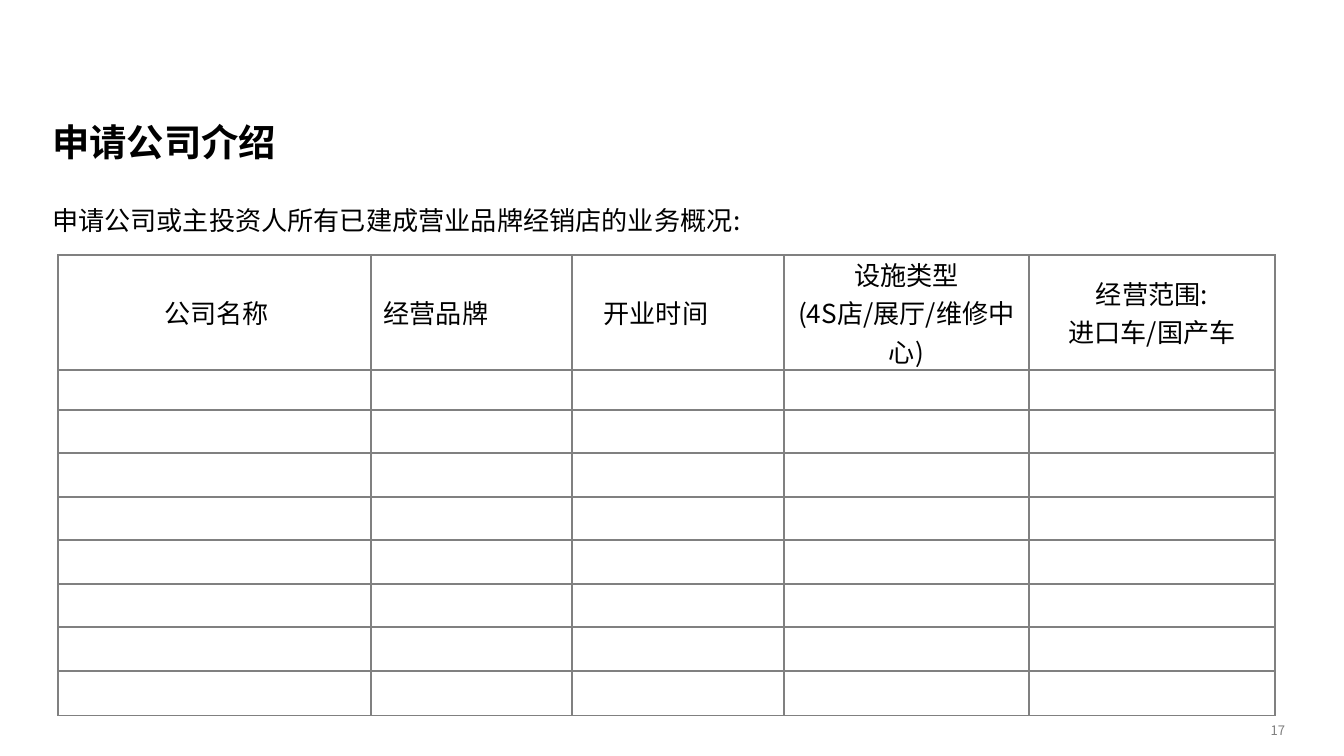
"""Build the applicant company slide with a blank form for dealership details."""
from lxml import etree
from pptx import Presentation
from pptx import util as u
from pptx.dml.color import RGBColor
from pptx.enum import text
from pptx.oxml.ns import qn

PX = 914400 / 134.4
FONT = "Noto Sans CJK SC"
BLACK, GREY = "000000", "808080"
LEFT, CENTER, RIGHT = text.PP_ALIGN.LEFT, text.PP_ALIGN.CENTER, text.PP_ALIGN.RIGHT
TOP, MIDDLE, BOTTOM = text.MSO_ANCHOR.TOP, text.MSO_ANCHOR.MIDDLE, text.MSO_ANCHOR.BOTTOM

# words, box, size, colour, bold, align, anchor, line spacing
TEXTS = [
    ("申请公司或主投资人所有已建成营业品牌经销店的业务概况:",
     (52, 198, 1234, 508), 14, BLACK, False, LEFT, TOP, 1.2),
    ("申请公司介绍", (52, 118, 1234, 47), 20, BLACK, True, LEFT, BOTTOM, 0.9),
    ("17", (1232, 723, 53, 15), 7, GREY, False, RIGHT, MIDDLE, 1.0),
]
# heading lines, column width, left margin, right margin
COLUMNS = [
    (["公司名称"], 313, 9, 5),
    (["经营品牌"], 201, 0, 71),
    (["开业时间"], 212, 0, 44),
    (["设施类型", "(4S店/展厅/维修中心)"], 245, 0, 0),
    (["经营范围:", "进口车/国产车"], 246, 0, 0),
]
ROWS = [115, 40] + [43, 44] * 3 + [45]
TABLE_AT = (58, 255)


def px(n):
    return u.Emu(round(n * PX))


def rgb(value):
    return RGBColor.from_string(value)


def style(p, size, color, bold, align, spacing=1.0):
    p.alignment = align
    p.line_spacing = spacing
    f = p.font
    f.name, f.size, f.bold = FONT, u.Pt(size), bold
    f.color.rgb = rgb(color)
    for r in p.runs:
        etree.SubElement(r._r.get_or_add_rPr(), qn("a:ea"), typeface=FONT)
    if not p.runs:
        etree.SubElement(p._p, qn("a:endParaRPr"), sz=str(size * 100))


def add_text(slide, words, box, size, color, bold, align, anchor, spacing):
    tf = slide.shapes.add_textbox(*map(px, box)).text_frame
    tf.word_wrap = True
    tf.vertical_anchor = anchor
    tf.margin_left = tf.margin_right = tf.margin_top = tf.margin_bottom = 0
    tf.text = words
    style(tf.paragraphs[0], size, color, bold, align, spacing)


def add_borders(cell):
    tcPr = cell._tc.get_or_add_tcPr()
    for side in "LRTB":
        ln = etree.SubElement(tcPr, qn(f"a:ln{side}"), w=str(u.Pt(1)))
        fill = etree.SubElement(ln, qn("a:solidFill"))
        etree.SubElement(fill, qn("a:srgbClr"), val=GREY)


def add_table(slide):
    size = sum(c[1] for c in COLUMNS), sum(ROWS)
    table = slide.shapes.add_table(
        len(ROWS), len(COLUMNS), *map(px, TABLE_AT + size)).table
    table.first_row = table.horz_banding = False
    for row, height in zip(table.rows, ROWS):
        row.height = px(height)
    for j, (lines, width, left, right) in enumerate(COLUMNS):
        table.columns[j].width = px(width)
        for i in range(len(ROWS)):
            cell = table.cell(i, j)
            cell.margin_left, cell.margin_right = px(left), px(right)
            cell.margin_top = cell.margin_bottom = 0
            cell.vertical_anchor = MIDDLE
            add_borders(cell)
            cell.fill.background()
            if i == 0:
                cell.text = "\n".join(lines)
            for p in cell.text_frame.paragraphs:
                style(p, 14, BLACK, False, CENTER)


def main():
    prs = Presentation()
    prs.slide_width, prs.slide_height = px(1344), px(756)
    slide = prs.slides.add_slide(prs.slide_layouts[6])
    for item in TEXTS:
        add_text(slide, *item)
    add_table(slide)
    prs.save("out.pptx")


if __name__ == "__main__":
    main()
